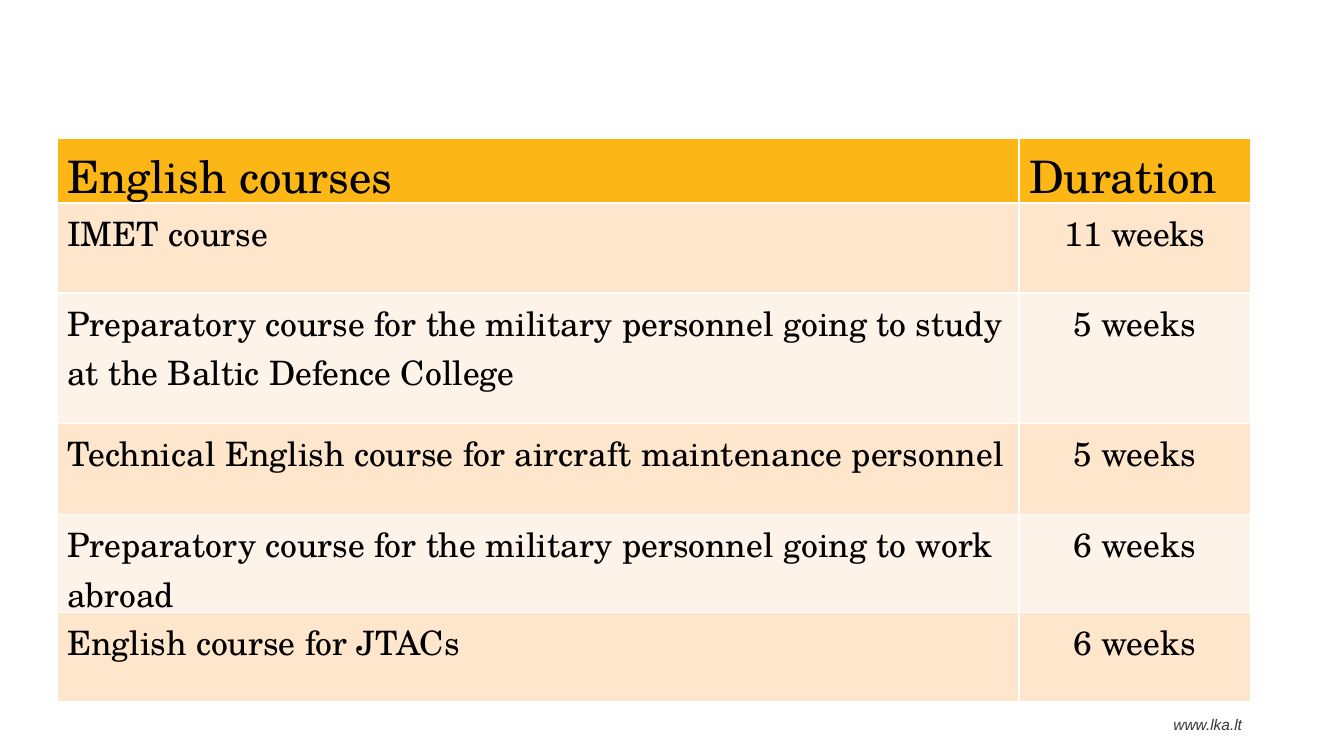
from dataclasses import dataclass

from lxml import etree
from pptx import Presentation
from pptx.dml.color import RGBColor
from pptx.enum.text import MSO_ANCHOR, PP_ALIGN
from pptx.oxml.ns import qn
from pptx.util import Emu, Pt

LEFT, CENTER, RIGHT = PP_ALIGN.LEFT, PP_ALIGN.CENTER, PP_ALIGN.RIGHT
TOP = MSO_ANCHOR.TOP

COURSES = [
    ("English courses", "Duration"),
    ("IMET course", "11 weeks"),
    ("Preparatory course for the military personnel going to study at the Baltic Defence College", "5 weeks"),
    ("Technical English course for aircraft maintenance personnel", "5 weeks"),
    ("Preparatory course for the military personnel going to work abroad", "6 weeks"),
    ("English course for JTACs", "6 weeks"),
]
WEBSITE = "www.lka.lt"

SLIDE_SIZE = (1344, 756)
TABLE_ORIGIN = (57, 138)
COLUMN_WIDTHS = [962, 232]
ROW_HEIGHTS = [65, 90, 131, 91, 98, 89]
WEBSITE_BOX = (961, 710, 291, 29)
CELL_TOP_MARGIN = 5


@dataclass(frozen=True)
class Theme:
    table_font: str = "TeX Gyre Schola"
    footer_font: str = "Arial"
    header_size: int = 32
    body_size: int = 24
    footer_size: int = 11
    text: str = "000000"
    footer: str = "3B3536"
    header_fill: str = "FCB716"
    band_fills: tuple = ("FEE6CC", "FEF3E8")
    border: str = "FFFFFF"
    border_width: int = 1


THEME = Theme()


def px(length):
    return Emu(round(length * 914400 / 100.8))


def write(text_frame, text, font_name, size, color, alignment, italic=False):
    text_frame.text = text
    paragraph = text_frame.paragraphs[0]
    paragraph.alignment = alignment
    font = paragraph.runs[0].font
    font.name, font.size, font.bold, font.italic = font_name, Pt(size), False, italic
    font.color.rgb = RGBColor.from_string(color)


def set_borders(cell):
    properties = cell._tc.get_or_add_tcPr()
    for position, side in enumerate(("a:lnL", "a:lnR", "a:lnT", "a:lnB")):
        line = etree.Element(qn(side), w=str(Pt(THEME.border_width)))
        fill = etree.SubElement(line, qn("a:solidFill"))
        etree.SubElement(fill, qn("a:srgbClr"), val=THEME.border)
        properties.insert(position, line)


def add_course_table(slide):
    shape = slide.shapes.add_table(
        len(COURSES), len(COLUMN_WIDTHS), *map(px, TABLE_ORIGIN),
        px(sum(COLUMN_WIDTHS)), px(sum(ROW_HEIGHTS)))
    table = shape.table
    for column, width in zip(table.columns, COLUMN_WIDTHS):
        column.width = px(width)
    for row, height in zip(table.rows, ROW_HEIGHTS):
        row.height = px(height)
    for row_index, course in enumerate(COURSES):
        is_header = row_index == 0
        fill = THEME.header_fill if is_header else THEME.band_fills[(row_index - 1) % 2]
        size = THEME.header_size if is_header else THEME.body_size
        for column_index, text in enumerate(course):
            cell = table.cell(row_index, column_index)
            cell.fill.solid()
            cell.fill.fore_color.rgb = RGBColor.from_string(fill)
            cell.vertical_anchor = TOP
            cell.margin_top, cell.margin_bottom = px(CELL_TOP_MARGIN), 0
            alignment = CENTER if column_index and not is_header else LEFT
            write(cell.text_frame, text, THEME.table_font, size, THEME.text, alignment)
            set_borders(cell)


def add_website(slide):
    text_frame = slide.shapes.add_textbox(*map(px, WEBSITE_BOX)).text_frame
    text_frame.word_wrap = True
    write(text_frame, WEBSITE, THEME.footer_font, THEME.footer_size, THEME.footer, RIGHT, italic=True)


def main():
    presentation = Presentation()
    presentation.slide_width, presentation.slide_height = map(px, SLIDE_SIZE)
    slide = presentation.slides.add_slide(presentation.slide_layouts[6])
    add_website(slide)
    add_course_table(slide)
    presentation.save("out.pptx")


if __name__ == "__main__":
    main()
